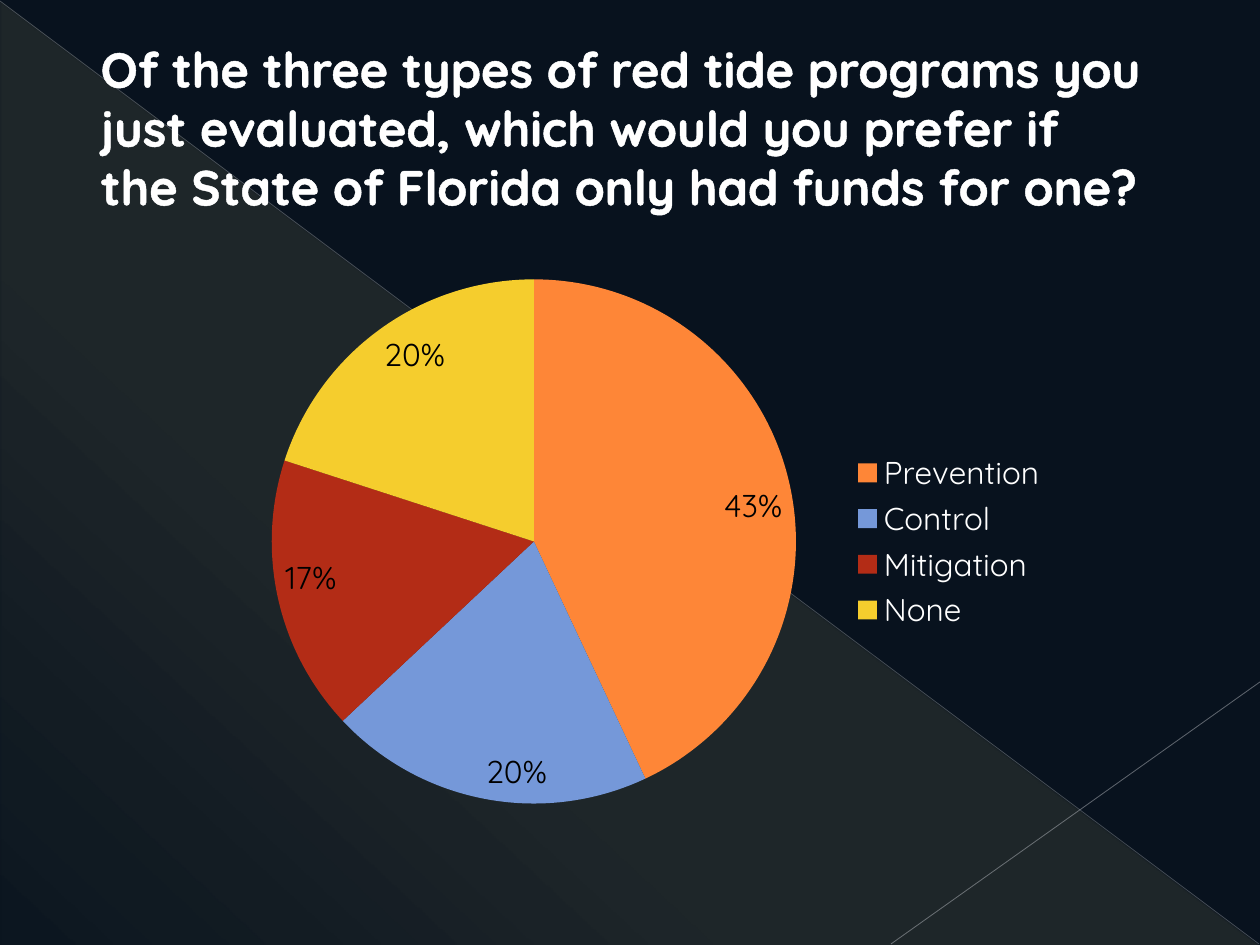
from lxml import etree
from pptx import Presentation, oxml, util as u
from pptx.chart.data import CategoryChartData
from pptx.dml.color import RGBColor
from pptx.enum import chart as ch, shapes, text
from pptx.oxml.ns import qn

PX = u.Inches(1) // 126
WHITE = "FFFFFF"
NS = 'xmlns:a="http://schemas.openxmlformats.org/drawingml/2006/main"'


def rgb(code):
    return RGBColor.from_string(code)


def format_font(font, size, color, bold=False):
    font.name = "Quicksand"
    font.size = u.Pt(size)
    font.bold = bold
    font.color.rgb = rgb(color)


prs = Presentation()
prs.slide_width, prs.slide_height = 1260 * PX, 945 * PX
s = prs.slides.add_slide(prs.slide_layouts[5])
s.background.fill.solid()
s.background.fill.fore_color.rgb = rgb("08121E")
title = s.shapes.title

# Background triangle with a faint gradient
sp = s.shapes.add_shape(shapes.MSO_SHAPE.RIGHT_TRIANGLE, 1 * PX, 2 * PX, 1258 * PX, 943 * PX)
sp.shadow.inherit = False
sp.line.fill.background()
sp.fill.gradient()
stops = "".join(
    f'<a:gs pos="{pos * 1000}"><a:srgbClr val="FFF39D"><a:alpha val="{alpha * 1000}"/></a:srgbClr></a:gs>'
    for pos, alpha in [(0, 10), (70, 8), (100, 1)])
grad = sp._element.spPr.find(qn("a:gradFill"))
grad.getparent().replace(grad, oxml.parse_xml(
    f'<a:gradFill {NS} rotWithShape="1"><a:gsLst>{stops}</a:gsLst>'
    f'<a:lin ang="{133 * 60000}" scaled="0"/></a:gradFill>'))

# Thin diagonal lines
for x1, y1, x2, y2, color, width, alpha in [
    (0, 1, 1259, 944, "BABDC4", 0.39, 35),
    (1260, 682, 891, 944, "C1C4CA", 0.47, 45),
]:
    line = s.shapes.add_connector(shapes.MSO_CONNECTOR.STRAIGHT, x1 * PX, y1 * PX, x2 * PX, y2 * PX)
    line.line.width = u.Pt(width)
    line.line.color.rgb = rgb(color)
    clr = next(line._element.spPr.iter(qn("a:srgbClr")))
    etree.SubElement(clr, qn("a:alpha"), val=str(alpha * 1000))
    etree.SubElement(line._element.spPr, qn("a:effectLst"))

# Title, moved in front of the background
s.shapes._spTree.append(title._element)
title.left, title.top, title.width, title.height = 21 * PX, 32 * PX, 1134 * PX, 190 * PX
tf = title.text_frame
tf.word_wrap = True
tf.auto_size = text.MSO_AUTO_SIZE.SHAPE_TO_FIT_TEXT
tf.vertical_anchor = text.MSO_ANCHOR.MIDDLE
p = tf.paragraphs[0]
p.alignment = text.PP_ALIGN.LEFT
pPr = p._p.get_or_add_pPr()
pPr.set("marL", str(67 * PX))
pPr.set("indent", "0")
r = p.add_run()
r.text = ("Of the three types of red tide programs you just evaluated, "
          "which would you prefer if the State of Florida only had funds for one?")
format_font(r.font, 28, WHITE, bold=True)
r._r.get_or_add_rPr().insert(0, oxml.parse_xml(
    f'<a:ln {NS} w="{u.Pt(0.75)}"><a:solidFill><a:srgbClr val="{WHITE}"/></a:solidFill></a:ln>'))

# Pie chart of preferences
slices = [("Prevention", 43, "FE8637"), ("Control", 20, "7598D9"),
          ("Mitigation", 17, "B32C16"), ("None", 20, "F5CD2D")]
data = CategoryChartData()
data.categories = [name for name, _, _ in slices]
data.add_series("Series 1", [value for _, value, _ in slices])
chart = s.shapes.add_chart(ch.XL_CHART_TYPE.PIE, 220 * PX, 262 * PX, 840 * PX, 559 * PX, data).chart
format_font(chart.font, 18, WHITE)
chart.has_title = False
chart.has_legend = True
chart.legend.position = ch.XL_LEGEND_POSITION.RIGHT
chart.legend.include_in_layout = False
plot = chart.plots[0]
plot.vary_by_categories = True
for i, (_, _, color) in enumerate(slices):
    fill = plot.series[0].points[i].format.fill
    fill.solid()
    fill.fore_color.rgb = rgb(color)
plot.has_data_labels = True
labels = plot.data_labels
labels.show_percentage = True
labels.show_value = False
labels.number_format = "0%"
labels.number_format_is_linked = False
labels.position = ch.XL_LABEL_POSITION.INSIDE_END
format_font(labels.font, 18, "000000")

prs.save("out.pptx")
